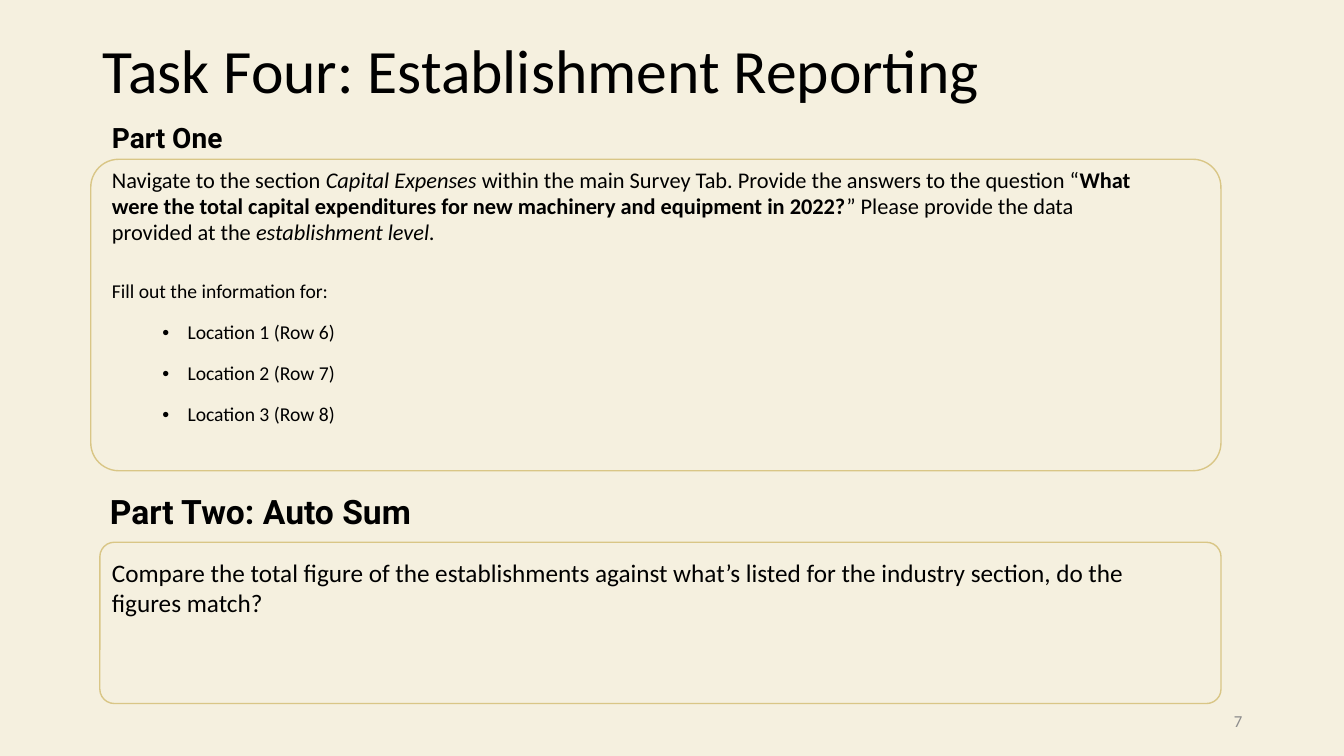
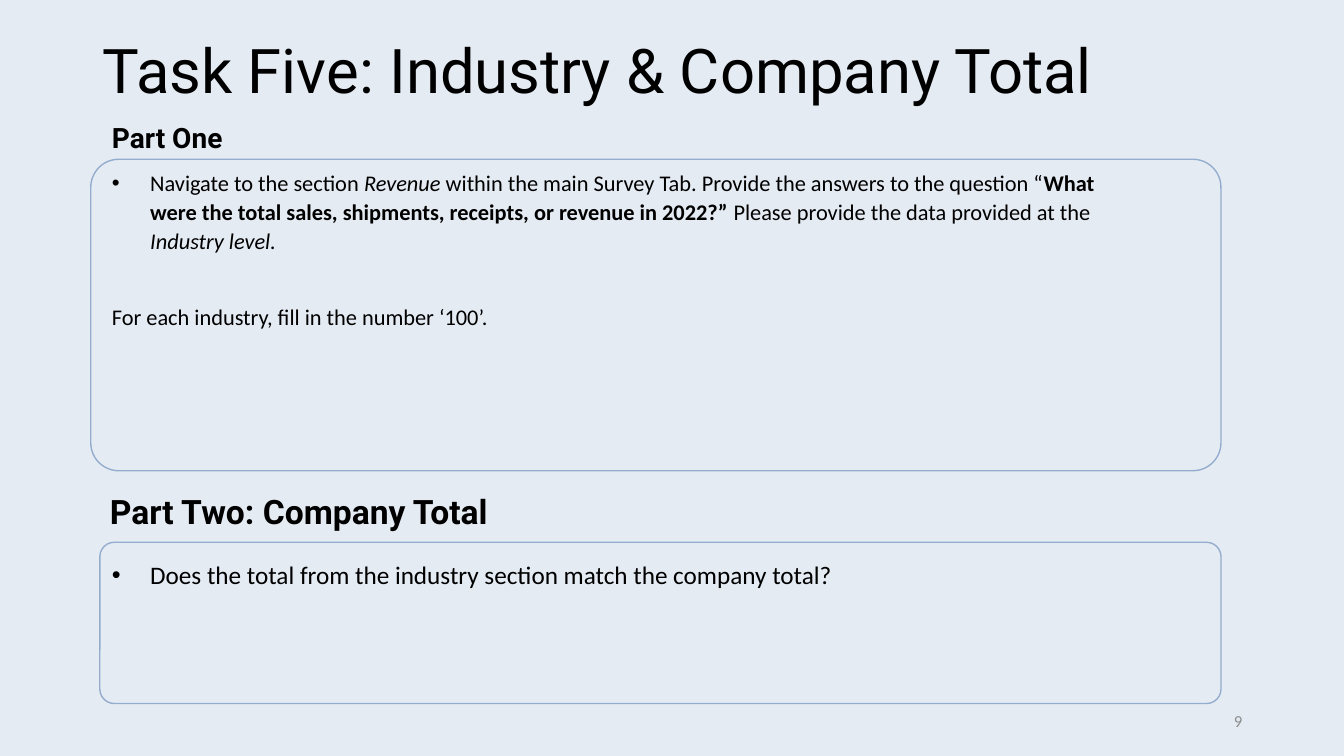
from dataclasses import dataclass

from lxml.etree import SubElement
from pptx import Presentation
from pptx.dml.color import RGBColor
from pptx.enum.shapes import MSO_SHAPE
from pptx.enum.text import MSO_ANCHOR, MSO_AUTO_SIZE, PP_ALIGN
from pptx.oxml.ns import qn
from pptx.util import Inches, Pt

COMPARISON_LAYOUT = 4
BLACK = "000000"
GREY = "8C8C8C"
BODY_FONT = "Calibri"
HEADING_FONT = "Roboto"

TITLE_AREA = (0.92, 0.28, 11.5, 0.9)
PART_ONE_HEADING = (1.01, 1.18, 5.64, 0.4)
PART_ONE_TEXT = (1.01, 1.61, 10.37, 2.87)
PART_ONE_FRAME = (0.9, 1.58, 11.21, 3.09)
PART_TWO_HEADING = (0.99, 4.82, 5.67, 0.51)
PART_TWO_TEXT = (1.01, 5.48, 10.37, 0.71)
PART_TWO_FRAME = (0.99, 5.38, 11.12, 1.6)
NUMBER_AREA = (9.42, 6.95, 3, 0.4)


@dataclass
class Line:
    """A paragraph: runs of (text, style) where style is "", "b" or "i"."""

    runs: list
    size: float
    font: str = BODY_FONT
    color: str = BLACK
    bold: bool = False
    spacing: float = 1
    before: float = 0
    after: float = 0
    bullet: bool = False
    margin: float = 0
    hanging: float = 0
    level: int = 0
    align: PP_ALIGN = PP_ALIGN.LEFT


@dataclass
class Task:
    """The content and colours of one task slide."""

    title: str
    title_font: str
    background: str
    frame: str
    part_one: list
    part_two_heading: str
    part_two: list
    number: str


def rgb(color):
    """Turn a hex string into a colour."""
    return RGBColor.from_string(color)


def set_bullet(paragraph, line):
    """Set the indents and the bullet, or switch the bullet off."""
    properties = paragraph._p.get_or_add_pPr()
    properties.set("marL", str(Inches(line.margin)))
    properties.set("indent", str(Inches(-line.hanging)))
    if line.bullet:
        SubElement(properties, qn("a:buFont"), typeface="Arial")
        SubElement(properties, qn("a:buChar"), char="•")
    else:
        SubElement(properties, qn("a:buNone"))


def write_paragraph(paragraph, line):
    """Write one line of content into a paragraph."""
    set_bullet(paragraph, line)
    paragraph.level = line.level
    paragraph.alignment = line.align
    paragraph.line_spacing = line.spacing
    paragraph.space_before = Pt(line.before)
    paragraph.space_after = Pt(line.after)
    paragraph.font.name = line.font
    paragraph.font.size = Pt(line.size)
    paragraph.font.bold = line.bold
    paragraph.font.color.rgb = rgb(line.color)
    for text, style in line.runs:
        run = paragraph.add_run()
        run.text = text
        if style == "b":
            run.font.bold = True
        elif style == "i":
            run.font.italic = True


def write_text(shape, area, lines, anchor=MSO_ANCHOR.TOP):
    """Place a text shape and fill it with lines."""
    shape.left, shape.top, shape.width, shape.height = map(Inches, area)
    frame = shape.text_frame
    frame.word_wrap = True
    frame.auto_size = MSO_AUTO_SIZE.NONE
    frame.vertical_anchor = anchor
    for index, line in enumerate(lines):
        paragraph = frame.add_paragraph() if index else frame.paragraphs[0]
        write_paragraph(paragraph, line)


def write_heading(shape, area, text, size):
    """Write a bold part heading that sits on the bottom of its area."""
    heading = Line([(text, "")], size, HEADING_FONT, bold=True, spacing=0.9, before=10)
    write_text(shape, area, [heading], MSO_ANCHOR.BOTTOM)


def add_frame(slide, area, color):
    """Draw a rounded outline around a part."""
    frame = slide.shapes.add_shape(MSO_SHAPE.ROUNDED_RECTANGLE, *map(Inches, area))
    frame.adjustments[0] = 0.09
    frame.shadow.inherit = False
    frame.fill.background()
    frame.line.color.rgb = rgb(color)
    frame.line.width = Pt(1)


def add_task_slide(presentation, task):
    """Build one task slide with two framed parts."""
    slide = presentation.slides.add_slide(presentation.slide_layouts[COMPARISON_LAYOUT])
    slide.background.fill.solid()
    slide.background.fill.fore_color.rgb = rgb(task.background)
    title, heading_one, text_one, heading_two, text_two = slide.placeholders
    title_line = Line([(task.title, "")], 44, task.title_font, spacing=0.9)
    write_text(title, TITLE_AREA, [title_line], MSO_ANCHOR.MIDDLE)
    write_heading(heading_one, PART_ONE_HEADING, "Part One", 20)
    write_text(text_one, PART_ONE_TEXT, task.part_one)
    write_heading(heading_two, PART_TWO_HEADING, task.part_two_heading, 24)
    write_text(text_two, PART_TWO_TEXT, task.part_two)
    for area in (PART_ONE_FRAME, PART_TWO_FRAME):
        add_frame(slide, area, task.frame)
    number = slide.shapes.add_textbox(*map(Inches, NUMBER_AREA))
    number_line = Line([(task.number, "")], 12, color=GREY, align=PP_ALIGN.RIGHT)
    write_text(number, NUMBER_AREA, [number_line], MSO_ANCHOR.MIDDLE)


def establishment_task():
    """Return the content of task four."""
    question = Line([
        ("Navigate to the section ", ""),
        ("Capital Expenses ", "i"),
        ("within the main Survey Tab. Provide the answers to the question “", ""),
        ("What were the total capital expenditures for new machinery and equipment in 2022?", "b"),
        ("” Please provide the data provided at the ", ""),
        ("establishment level.", "i"),
    ], 16, spacing=0.97)
    instruction = Line([("Fill out the information for:", "")], 14,
                       spacing=0.97, before=25, after=8)
    locations = [
        Line([(f"Location {place} (Row {place + 5})", "")], 14, spacing=0.97, before=5,
             after=8, bullet=True, margin=0.75, hanging=0.25, level=1)
        for place in range(1, 4)
    ]
    comparison = Line([("Compare the total figure of the establishments against what’s listed "
                        "for the industry section, do the figures match?", "")], 18)
    return Task("Task Four: Establishment Reporting", BODY_FONT, "F5F0DF", "D9C686",
                [question, instruction, *locations],
                "Part Two: Auto Sum", [comparison], "7")


def industry_task():
    """Return the content of task five."""
    question = Line([
        ("Navigate to the section ", ""),
        ("Revenue ", "i"),
        ("within the main Survey Tab. Provide the answers to the question “", ""),
        ("What were the total sales, shipments, receipts, or revenue in 2022?” ", "b"),
        ("Please provide the data provided at the ", ""),
        ("Industry level.", "i"),
    ], 16, spacing=1.07, before=10, after=8, bullet=True, margin=0.38, hanging=0.38)
    instruction = Line([("For each industry, fill in the number ‘100’.", "")], 16,
                       spacing=1.07, before=26, after=8)
    comparison = Line([("Does the total from the industry section match the company total?", "")],
                      18, spacing=1.07, after=8, bullet=True, margin=0.38, hanging=0.38)
    return Task("Task Five: Industry & Company Total", HEADING_FONT, "E5EBF3", "94ADCE",
                [question, instruction],
                "Part Two: Company Total", [comparison], "9")


def main():
    """Build and save the presentation."""
    presentation = Presentation()
    presentation.slide_width = Inches(13.33)
    presentation.slide_height = Inches(7.5)
    for task in (establishment_task(), industry_task()):
        add_task_slide(presentation, task)
    presentation.save("out.pptx")


if __name__ == "__main__":
    main()
